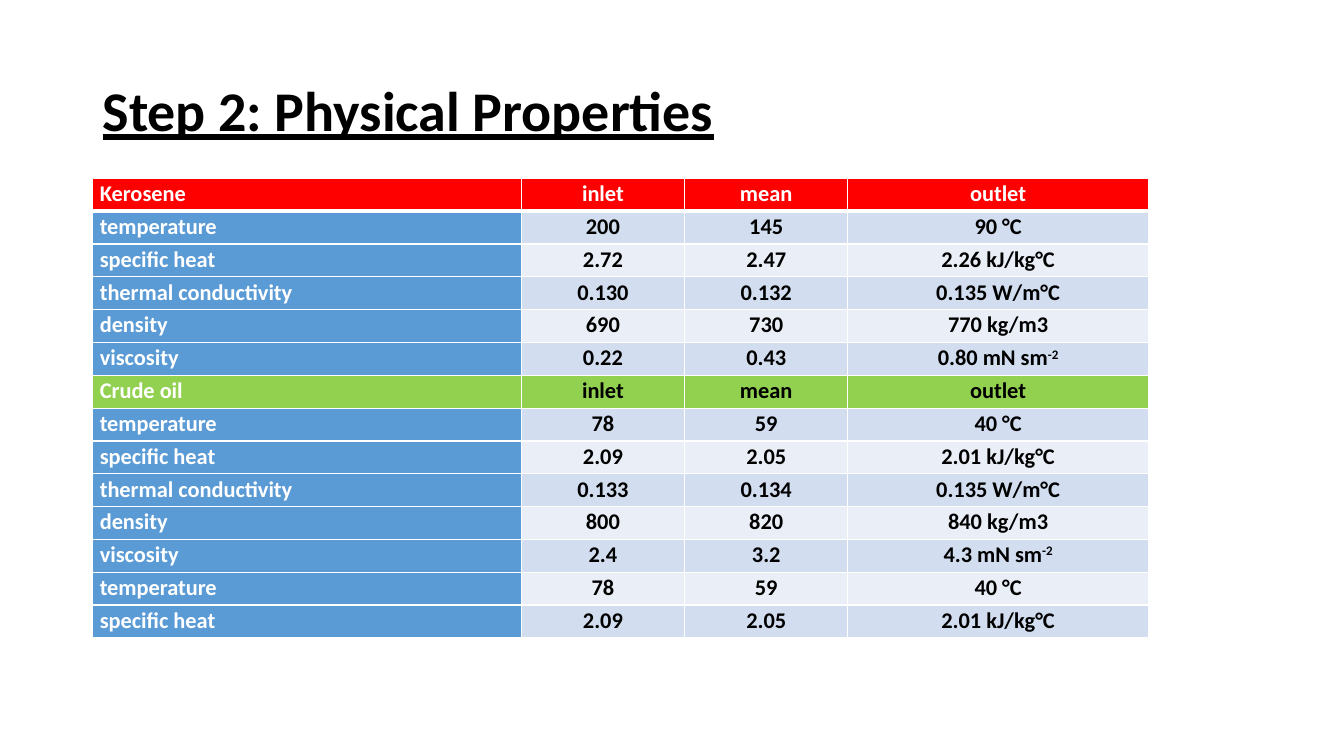
from lxml import etree
from pptx import Presentation
from pptx import util as u
from pptx.dml.color import RGBColor
from pptx.enum import text
from pptx.oxml.ns import qn

WHITE, BLACK = "FFFFFF", "000000"
RED, GREEN, BLUE = "FF0000", "92D050", "5B9BD5"
BANDS = ("EAEFF7", "D2DEEF")
COLUMN_WIDTHS = (4.25, 1.62, 1.62, 2.98)
ROW_HEIGHT = 4.56 / 14
HEADINGS = {"Kerosene": (RED, WHITE), "Crude oil": (GREEN, BLACK)}
PROPERTIES = [
    ("Kerosene", "inlet", "mean", "outlet"),
    ("temperature", "200", "145", "90 °C"),
    ("specific heat", "2.72", "2.47", "2.26 kJ/kg°C"),
    ("thermal conductivity", "0.130", "0.132", "0.135 W/m°C"),
    ("density", "690", "730", "770 kg/m3"),
    ("viscosity", "0.22", "0.43", "0.80 mN sm^-2"),
    ("Crude oil", "inlet", "mean", "outlet"),
    ("temperature", "78", "59", "40 °C"),
    ("specific heat", "2.09", "2.05", "2.01 kJ/kg°C"),
    ("thermal conductivity", "0.133", "0.134", "0.135 W/m°C"),
    ("density", "800", "820", "840 kg/m3"),
    ("viscosity", "2.4", "3.2", "4.3 mN sm^-2"),
    ("temperature", "78", "59", "40 °C"),
    ("specific heat", "2.09", "2.05", "2.01 kJ/kg°C"),
]


def color(value):
    return RGBColor.from_string(value)


def style_paragraph(para, size, ink, spacing):
    para.line_spacing = spacing
    para.font.name = "Calibri"
    para.font.size = u.Pt(size)
    para.font.bold = True
    para.font.color.rgb = color(ink)


def add_title(page, wording):
    box = page.shapes.add_textbox(u.Inches(0.92), u.Inches(0.4), u.Inches(11.5), u.Inches(1.45))
    frame = box.text_frame
    frame.word_wrap = True
    frame.vertical_anchor = text.MSO_ANCHOR.MIDDLE
    para = frame.paragraphs[0]
    para.add_run().text = wording
    style_paragraph(para, 40, BLACK, 0.9)
    para.font.underline = True


def add_borders(cell, bottom_width):
    properties = cell._tc.get_or_add_tcPr()
    widths = {"a:lnL": 1, "a:lnR": 1, "a:lnT": 1, "a:lnB": bottom_width}
    for position, (side, width) in enumerate(widths.items()):
        line = etree.Element(qn(side), w=str(u.Pt(width)))
        fill = etree.SubElement(line, qn("a:solidFill"))
        etree.SubElement(fill, qn("a:srgbClr"), val=WHITE)
        properties.insert(position, line)


def fill_cell(cell, wording, fill, ink, centred, bottom_width):
    cell.margin_left = cell.margin_right = u.Inches(0.07)
    cell.margin_top = cell.margin_bottom = 0
    cell.fill.solid()
    cell.fill.fore_color.rgb = color(fill)
    add_borders(cell, bottom_width)
    para = cell.text_frame.paragraphs[0]
    base, _, exponent = wording.partition("^")
    para.add_run().text = base
    if exponent:
        span = para.add_run()
        span.text = exponent
        span._r.get_or_add_rPr().set("baseline", "30000")
    if centred:
        para.alignment = text.PP_ALIGN.CENTER
    style_paragraph(para, 16, ink, 1.07)


def add_property_table(page):
    frame = page.shapes.add_table(
        len(PROPERTIES), len(COLUMN_WIDTHS), u.Inches(0.92), u.Inches(1.77),
        u.Inches(sum(COLUMN_WIDTHS)), u.Inches(ROW_HEIGHT * len(PROPERTIES)))
    table = frame.table
    table.first_row = table.horz_banding = False
    for column, width in zip(table.columns, COLUMN_WIDTHS):
        column.width = u.Inches(width)
    for index, values in enumerate(PROPERTIES):
        table.rows[index].height = u.Inches(ROW_HEIGHT)
        heading = HEADINGS.get(values[0])
        value_fill, value_ink = heading or (BANDS[index % 2], BLACK)
        label_fill = value_fill if heading else BLUE
        bottom_width = 3 if index == 0 else 1
        for column, wording in enumerate(values):
            fill, ink = (value_fill, value_ink) if column else (label_fill, WHITE)
            fill_cell(table.cell(index, column), wording, fill, ink, column > 0, bottom_width)


def main():
    deck = Presentation()
    deck.slide_width = u.Inches(13.33)
    deck.slide_height = u.Inches(7.5)
    page = deck.slides.add_slide(deck.slide_layouts[6])
    add_title(page, "Step 2: Physical Properties")
    add_property_table(page)
    deck.save("out.pptx")


if __name__ == "__main__":
    main()
